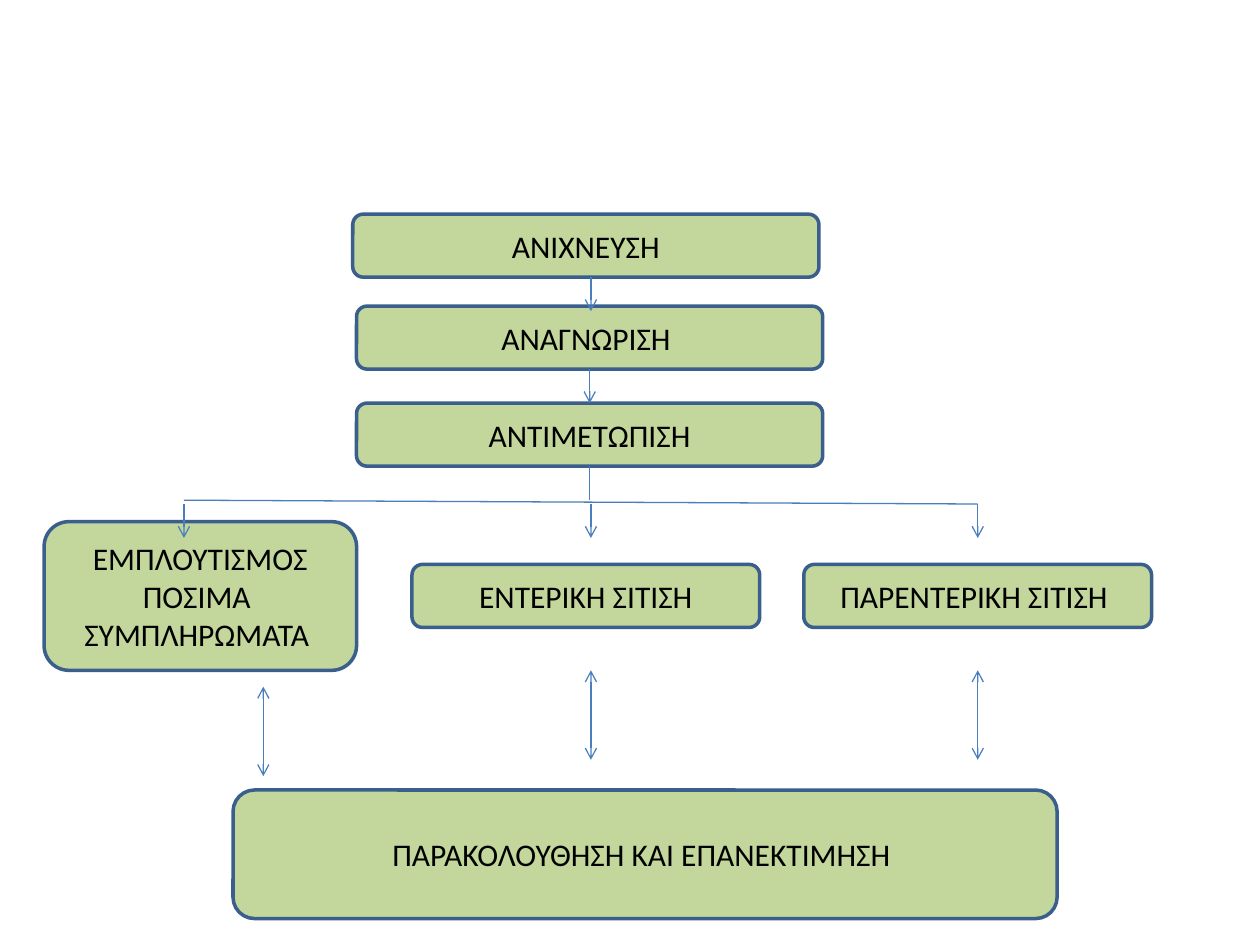
"""Builds a flowchart slide of the nutrition care steps."""
from dataclasses import dataclass

from pptx import Presentation
from pptx.dml.color import RGBColor
from pptx.enum.shapes import MSO_CONNECTOR as Connector, MSO_SHAPE as Preset
from pptx.enum.text import MSO_ANCHOR as Anchor, PP_ALIGN as Align
from pptx.oxml.ns import qn
from pptx.util import Inches, Pt
from lxml.etree import SubElement


@dataclass(frozen=True)
class Theme:
    """Colours, font and sizes of the slide."""
    box_fill: RGBColor = RGBColor(0xC3, 0xD6, 0x9B)
    box_line: RGBColor = RGBColor(0x3A, 0x5F, 0x8C)
    arrow_line: RGBColor = RGBColor(0x4B, 0x7E, 0xBC)
    text: RGBColor = RGBColor(0, 0, 0)
    font: str = "Calibri"
    text_size: Pt = Pt(18)
    box_width: Pt = Pt(2)
    arrow_width: Pt = Pt(0.75)


THEME = Theme()
TRUNK_X = 4.69
BRANCH_LEFT, BRANCH_RIGHT = 1.46, 7.76
BRANCH_Y = 4
STEP = 0.27
REVIEW_STEP = 0.71


def add_box(slide, left, top, width, height, *lines):
    """Add a rounded box with one centred paragraph per line."""
    shape = slide.shapes.add_shape(
        Preset.ROUNDED_RECTANGLE,
        Inches(left), Inches(top), Inches(width), Inches(height))
    shape.shadow.inherit = False
    shape.fill.solid()
    shape.fill.fore_color.rgb = THEME.box_fill
    shape.line.color.rgb = THEME.box_line
    shape.line.width = THEME.box_width
    frame = shape.text_frame
    frame.word_wrap = True
    frame.vertical_anchor = Anchor.MIDDLE
    for index, line in enumerate(lines):
        paragraph = frame.add_paragraph() if index else frame.paragraphs[0]
        paragraph.alignment = Align.CENTER
        run = paragraph.add_run()
        run.text = line
        run.font.name = THEME.font
        run.font.size = THEME.text_size
        run.font.color.rgb = THEME.text
    return shape


def add_line(slide, start, end, *arrowheads):
    """Add a thin line, with arrowheads at the ends named headEnd or tailEnd."""
    connector = slide.shapes.add_connector(
        Connector.STRAIGHT, *(Inches(value) for value in (*start, *end)))
    connector.line.color.rgb = THEME.arrow_line
    connector.line.width = THEME.arrow_width
    outline = connector.line._get_or_add_ln()
    for name in arrowheads:
        SubElement(outline, qn(f"a:{name}"), type="arrow")
    SubElement(connector._element.spPr, qn("a:effectLst"))
    return connector


def add_drop(slide, x, top, length, *arrowheads):
    """Add a vertical line of the given length."""
    return add_line(slide, (x, top), (x, top + length), *arrowheads)


def main():
    """Build and save the slide."""
    presentation = Presentation()
    presentation.slide_width, presentation.slide_height = Inches(10), Inches(7.5)
    slide = presentation.slides.add_slide(presentation.slide_layouts[6])

    add_box(slide, 2.8, 1.7, 3.7, 0.5, "ΑΝΙΧΝΕΥΣΗ")
    recognition = add_box(slide, 2.83, 2.43, 3.7, 0.5, "ΑΝΑΓΝΩΡΙΣΗ ")
    treatment = add_box(slide, 2.83, 3.2, 3.7, 0.5, "ΑΝΤΙΜΕΤΩΠΙΣΗ")
    add_box(slide, 0.35, 4.14, 2.48, 1.18,
            "ΕΜΠΛΟΥΤΙΣΜΟΣ", "ΠΟΣΙΜΑ ", "ΣΥΜΠΛΗΡΩΜΑΤΑ ")
    add_box(slide, 3.27, 4.48, 2.76, 0.5, "ΕΝΤΕΡΙΚΗ ΣΙΤΙΣΗ")
    add_box(slide, 6.38, 4.48, 2.76, 0.5, "ΠΑΡΕΝΤΕΡΙΚΗ ΣΙΤΙΣΗ ")
    add_box(slide, 1.85, 6.27, 6.54, 1.02, "ΠΑΡΑΚΟΛΟΥΘΗΣΗ ΚΑΙ ΕΠΑΝΕΚΤΙΜΗΣΗ ")

    add_drop(slide, TRUNK_X, 2.2, STEP, "tailEnd")
    to_treatment = add_drop(slide, 4.68, 2.93, STEP, "tailEnd")
    to_treatment.begin_connect(recognition, 2)
    to_treatment.end_connect(treatment, 0)
    trunk = add_drop(slide, 4.68, 3.7, STEP)
    trunk.begin_connect(treatment, 2)

    add_line(slide, (BRANCH_LEFT, 3.97), (BRANCH_RIGHT, BRANCH_Y))
    for x in (BRANCH_LEFT, TRUNK_X, BRANCH_RIGHT):
        add_drop(slide, x, BRANCH_Y, STEP, "tailEnd")
    for x, top in ((2.09, 5.45), (TRUNK_X, 5.32), (BRANCH_RIGHT, 5.32)):
        add_drop(slide, x, top, REVIEW_STEP, "headEnd", "tailEnd")

    presentation.save("out.pptx")


if __name__ == "__main__":
    main()
